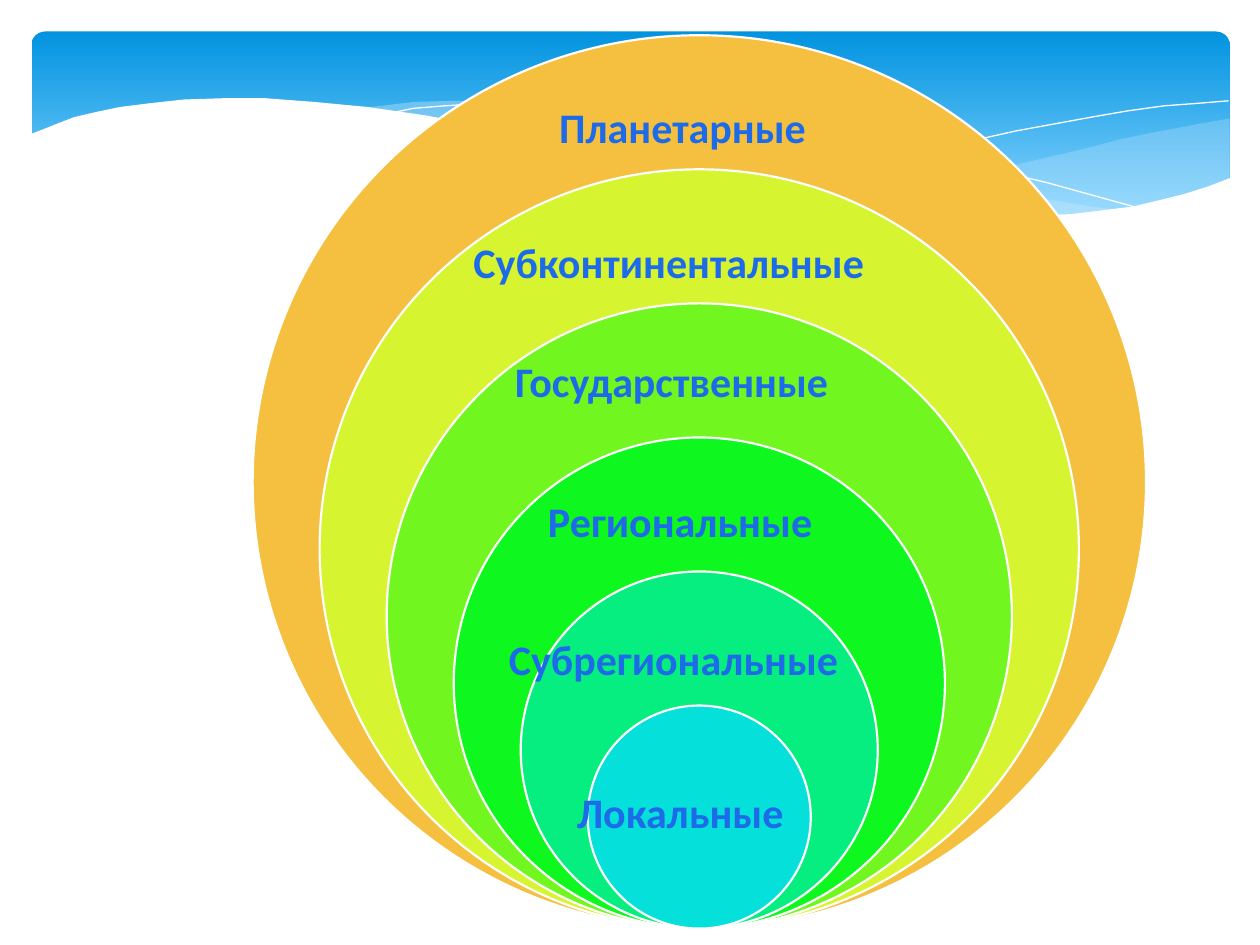
from lxml.etree import SubElement
from pptx import Presentation
from pptx.dml.color import RGBColor
from pptx.enum.shapes import MSO_SHAPE as Shape
from pptx.oxml.ns import qn
from pptx.util import Inches, Pt

# Content: outermost level first, with circle colour and label box (left, top, width)
LEVELS = [
    ("Планетарные", "F5C040", (4.34, 0.76, 2.47)),
    ("Субконтинентальные", "D6F530", (3.66, 1.83, 3.83)),
    ("Государственные", "72F61F", (3.99, 2.77, 3.17)),
    ("Региональные", "0EF71E", (4.25, 3.88, 2.65)),
    ("Субрегиональные", "07EE80", (3.94, 4.98, 3.28)),
    ("Локальные", "05E0DB", (4.48, 6.19, 2.1)),
]

THEME = {
    "font": "Calibri", "label_size": 24, "label": "1D6BE8",
    "sky": ("0293E0", "83D3FE"), "mist": "C6E7FC", "white": "FFFFFF",
    "circle_line": 1.25, "hairline": 0,
}

# Nested circles share a centre line and a lowest point
CENTRE_X, BASE_Y = 5.55, 7.37
LARGEST, SMALLEST = 7.09, 1.77
LABEL_HEIGHT = 0.5

# Header waves, in inches
RIGHT_MIST = [
    (9.76, 0.94), (9.48, 0.99), (9.21, 1.04), (8.91, 1.1), (8.61, 1.18),
    (8.05, 1.31), (7.53, 1.43), (7.06, 1.52), (6.61, 1.6), (6.91, 1.64),
    (7.19, 1.67), (7.45, 1.69), (7.69, 1.71), (7.92, 1.72), (8.35, 1.72),
    (8.63, 1.7), (8.89, 1.66), (9.13, 1.62), (9.35, 1.56), (9.63, 1.47),
    (9.76, 1.41),
]
LONG_MIST = [
    (8.93, 1.67), (8.66, 1.64), (8.07, 1.54), (7.41, 1.42), (6.68, 1.26),
    (6.29, 1.16), (5.98, 1.09), (5.69, 1.02), (5.41, 0.97), (5.14, 0.92),
    (4.89, 0.89), (4.42, 0.83), (3.99, 0.8), (3.61, 0.8), (3.28, 0.81),
    (2.86, 0.86), (3.23, 0.9), (3.62, 0.97), (4.04, 1.06), (4.49, 1.16),
    (5.3, 1.35), (5.84, 1.46), (6.34, 1.56), (6.8, 1.63), (7.22, 1.68),
    (7.61, 1.71), (7.96, 1.73), (8.28, 1.73), (8.57, 1.71),
]
LONG_CREST = [
    (3.09, 0.9), (3.28, 0.86), (3.53, 0.84), (3.87, 0.82), (4.16, 0.81),
    (4.5, 0.82), (4.89, 0.84), (5.33, 0.88), (5.82, 0.94), (6.36, 1.03),
    (6.95, 1.14), (7.6, 1.28), (8.31, 1.45), (9.07, 1.66),
]
RIGHT_CREST = [
    (6.13, 1.51), (6.53, 1.41), (6.95, 1.3), (7.48, 1.17), (8.06, 1.04),
    (8.66, 0.93), (8.95, 0.88), (9.24, 0.84), (9.51, 0.82), (9.75, 0.8),
]
WHITE_WAVE = [
    (9.77, 1.41), (9.59, 1.48), (9.4, 1.54), (9.2, 1.59), (8.99, 1.64),
    (8.75, 1.67), (8.5, 1.7), (8.23, 1.71), (7.93, 1.71), (7.61, 1.7),
    (7.26, 1.67), (6.88, 1.62), (6.48, 1.56), (6.03, 1.49), (5.55, 1.39),
    (5.03, 1.28), (4.47, 1.14), (3.91, 1.02), (3.4, 0.92), (2.92, 0.85),
    (2.5, 0.81), (2.11, 0.78), (1.77, 0.78), (1.46, 0.79), (1.19, 0.82),
    (0.95, 0.85), (0.76, 0.89), (0.59, 0.93), (0.46, 0.98), (0.36, 1.02),
    (0.23, 1.07), (0.23, 2.24), (9.77, 2.24),
]


def rgb(name):
    return RGBColor.from_string(name)


def outline(shape, width):
    shape.line.color.rgb = rgb(THEME["white"])
    shape.line.width = Pt(width)


def add_path(page, points, closed):
    start, *rest = [(Inches(x), Inches(y)) for x, y in points]
    builder = page.shapes.build_freeform(*start)
    builder.add_line_segments(rest, close=closed)
    shape = builder.convert_to_shape()
    shape.shadow.inherit = False
    return shape


def add_wave(page, points, colour, opacity=100):
    wave = add_path(page, points, True)
    wave.fill.solid()
    wave.fill.fore_color.rgb = rgb(colour)
    wave.line.fill.background()
    if opacity < 100:
        colour_node = wave.fill._xPr.find(qn("a:solidFill"))[0]
        SubElement(colour_node, qn("a:alpha"), val=str(opacity * 1000))


def add_crest(page, points):
    crest = add_path(page, points, False)
    crest.fill.background()
    outline(crest, THEME["hairline"])


def add_header(page):
    sky = page.shapes.add_shape(
        Shape.ROUNDED_RECTANGLE, Inches(0.25), Inches(0.25), Inches(9.51), Inches(1.56))
    sky.adjustments[0] = 0.07
    sky.shadow.inherit = False
    sky.line.fill.background()
    sky.fill.gradient()
    sky.fill.gradient_angle = 270
    for stop, colour, position in zip(sky.fill.gradient_stops, THEME["sky"], (0, 0.9)):
        stop.color.rgb = rgb(colour)
        stop.position = position

    add_wave(page, RIGHT_MIST, THEME["mist"], 29)
    add_wave(page, LONG_MIST, THEME["mist"], 40)
    add_crest(page, LONG_CREST)
    add_crest(page, RIGHT_CREST)
    add_wave(page, WHITE_WAVE, THEME["white"])


def add_circle(page, diameter, colour):
    circle = page.shapes.add_shape(
        Shape.OVAL, Inches(CENTRE_X - diameter / 2), Inches(BASE_Y - diameter),
        Inches(diameter), Inches(diameter))
    circle.shadow.inherit = False
    circle.fill.solid()
    circle.fill.fore_color.rgb = rgb(colour)
    outline(circle, THEME["circle_line"])


def add_label(page, text, left, top, width):
    box = page.shapes.add_textbox(
        Inches(left), Inches(top), Inches(width), Inches(LABEL_HEIGHT))
    box.text_frame.word_wrap = True
    para = box.text_frame.paragraphs[0]
    para.text = text
    para.font.name = THEME["font"]
    para.font.size = Pt(THEME["label_size"])
    para.font.bold = True
    para.font.color.rgb = rgb(THEME["label"])


def main():
    deck = Presentation()
    deck.slide_width, deck.slide_height = Inches(10), Inches(7.5)
    page = deck.slides.add_slide(deck.slide_layouts[6])

    add_header(page)

    # Circles shrink by equal steps, then labels go on top
    step = (LARGEST - SMALLEST) / (len(LEVELS) - 1)
    for index, (_, colour, _) in enumerate(LEVELS):
        add_circle(page, LARGEST - index * step, colour)
    for text, _, place in LEVELS:
        add_label(page, text, *place)

    deck.save("out.pptx")


if __name__ == "__main__":
    main()
